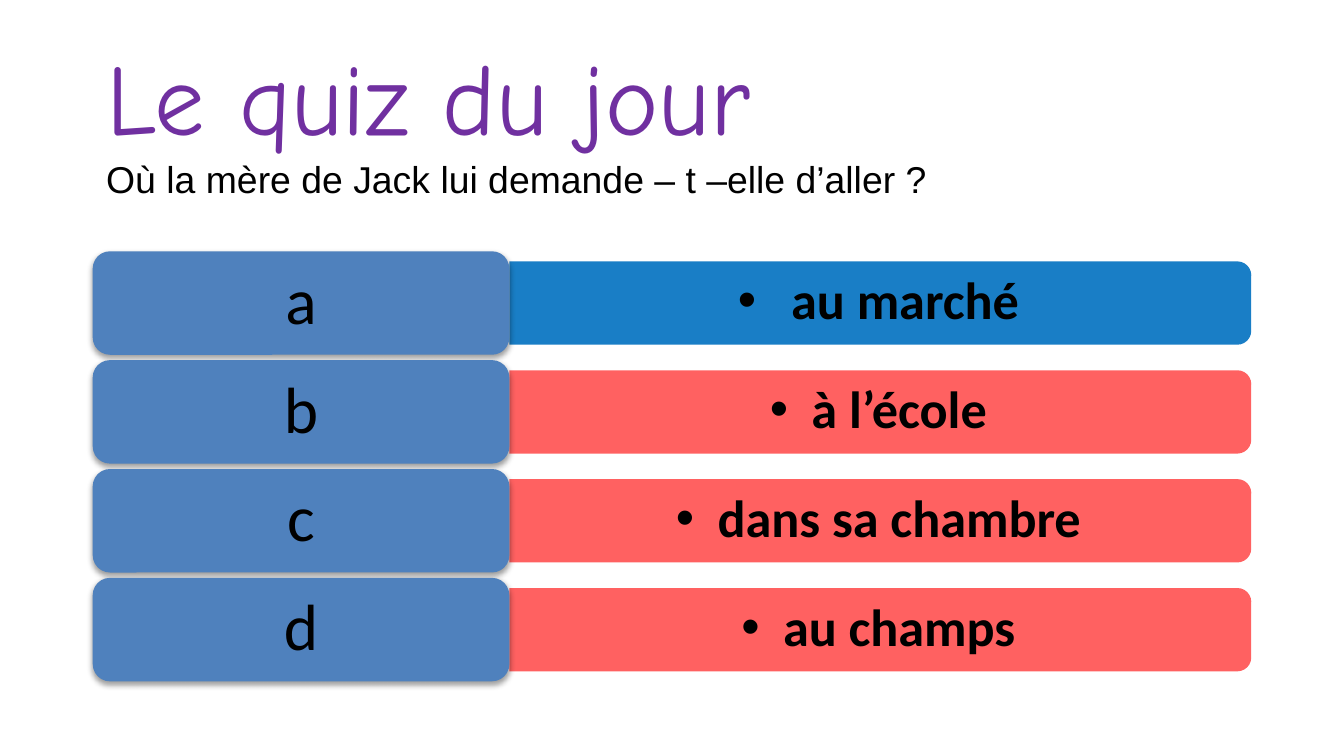
from dataclasses import dataclass

from lxml.etree import SubElement
from pptx import Presentation
from pptx.dml.color import RGBColor
from pptx.enum.shapes import MSO_SHAPE as Shape
from pptx.enum.text import MSO_ANCHOR as Anchor, MSO_AUTO_SIZE as AutoSize, PP_ALIGN as Align
from pptx.oxml.ns import qn
from pptx.util import Inches, Pt


@dataclass(frozen=True)
class Theme:
    """Colours, fonts and type sizes of the quiz."""
    title: str = "7030A0"
    ink: str = "000000"
    label: str = "4F81BD"
    correct: str = "0070C0"
    wrong: str = "FF5050"
    title_font: str = "Comic Neue"
    question_font: str = "Arial"
    answer_font: str = "Calibri"
    title_size: int = 54
    question_size: int = 20
    label_size: int = 35
    answer_size: int = 28


@dataclass(frozen=True)
class Grid:
    """Columns and rows of the answer list, in inches."""
    left: float = 0.69
    top: float = 1.87
    label_width: float = 3.1
    answer_width: float = 5.52
    row_height: float = 0.77
    bar_height: float = 0.62
    pitch: float = 0.81

    @property
    def answer_left(self):
        """Return the left edge of the answer column."""
        return self.left + self.label_width

    def row_top(self, row):
        """Return the top edge of a row."""
        return self.top + row * self.pitch

    def row_middle(self, row):
        """Return the vertical middle of a row."""
        return self.row_top(row) + self.row_height / 2


THEME = Theme()
GRID = Grid()
SLIDE_WIDTH = Inches(10)
SLIDE_HEIGHT = SLIDE_WIDTH * 9 // 16
QUESTION = "Où la mère de Jack lui demande – t –elle d’aller ?"
ANSWERS = [
    ("a", " au marché", THEME.correct),
    ("b", "à l’école", THEME.wrong),
    ("c", "dans sa chambre", THEME.wrong),
    ("d", "au champs", THEME.wrong),
]


def apply_format(target, values):
    """Set every attribute named in a dict of format values."""
    for name, value in values.items():
        setattr(target, name, value)


def box(left, top, width, height):
    """Return a position and size in slide units."""
    return [Inches(value) for value in (left, top, width, height)]


def add_run(paragraph, text, size, font, color, bold=False):
    """Add a formatted run to a paragraph."""
    run = paragraph.add_run()
    run.text = text
    apply_format(run.font, {"size": Pt(size), "name": font, "bold": bold})
    run.font.color.rgb = RGBColor.from_string(color)


def set_frame(frame, side, edge):
    """Centre a text frame vertically, set its margins and return its paragraph."""
    apply_format(frame, {
        "word_wrap": True, "auto_size": AutoSize.NONE, "vertical_anchor": Anchor.MIDDLE,
        "margin_left": Inches(side), "margin_right": Inches(side),
        "margin_top": Inches(edge), "margin_bottom": Inches(edge),
    })
    return frame.paragraphs[0]


def add_block(slide, kind, area, color):
    """Add a filled shape without outline or shadow."""
    shape = slide.shapes.add_shape(kind, *area)
    shape.shadow.inherit = False
    shape.fill.solid()
    shape.fill.fore_color.rgb = RGBColor.from_string(color)
    shape.line.fill.background()
    return shape


def set_alpha(parent, percent):
    """Give the colour element an opacity."""
    SubElement(parent, qn("a:alpha"), val=str(percent * 1000))


def add_shadow(shape):
    """Give a shape a soft shadow below it."""
    effects = shape._element.spPr.find(qn("a:effectLst"))
    shadow = SubElement(effects, qn("a:outerShdw"), blurRad=str(Pt(3.1)), dist=str(Pt(1.6)),
                        dir="5400000", rotWithShape="0")
    set_alpha(SubElement(shadow, qn("a:srgbClr"), val=THEME.ink), 38)


def add_bullet(paragraph):
    """Give a paragraph a hanging round bullet."""
    properties = paragraph._p.get_or_add_pPr()
    properties.set("marL", str(Inches(0.31)))
    properties.set("indent", str(Inches(-0.31)))
    SubElement(properties, qn("a:buFont"), typeface="Arial")
    SubElement(properties, qn("a:buChar"), char="•")


def add_title(slide):
    """Fill the title placeholder with the heading and the question."""
    title = slide.shapes.title
    title.left, title.top, title.width, title.height = box(GRID.left, 0.2, 8.62, 1.35)
    paragraph = set_frame(title.text_frame, 0.1, 0.05)
    paragraph.alignment = Align.LEFT
    add_run(paragraph, "Le quiz du jour", THEME.title_size, THEME.title_font, THEME.title)
    paragraph.add_line_break()
    add_run(paragraph, QUESTION, THEME.question_size, THEME.question_font, THEME.ink)


def add_answer(slide, row, text, color):
    """Add the answer bar, rounded on its right side, and its bulleted text."""
    middle = GRID.row_middle(row)
    center = GRID.answer_left + GRID.answer_width / 2
    area = box(center - GRID.bar_height / 2, middle - GRID.answer_width / 2,
               GRID.bar_height, GRID.answer_width)
    bar = add_block(slide, Shape.ROUND_2_SAME_RECTANGLE, area, color)
    bar.rotation = 90
    set_alpha(bar._element.spPr.find(qn("a:solidFill"))[0], 90)
    text_box = slide.shapes.add_textbox(*box(GRID.answer_left, middle - 0.28, 5.49, 0.56))
    paragraph = set_frame(text_box.text_frame, 0.12, 0.06)
    apply_format(paragraph, {"alignment": Align.CENTER, "line_spacing": 0.9, "level": 1})
    add_bullet(paragraph)
    add_run(paragraph, text, THEME.answer_size, THEME.answer_font, THEME.ink, True)


def add_label(slide, row, letter):
    """Add the rounded box with the letter of an answer."""
    area = box(GRID.left, GRID.row_top(row), GRID.label_width, GRID.row_height)
    label = add_block(slide, Shape.ROUNDED_RECTANGLE, area, THEME.label)
    add_shadow(label)
    paragraph = set_frame(label.text_frame, 0.15, 0.07)
    apply_format(paragraph, {"alignment": Align.CENTER, "line_spacing": 0.9})
    add_run(paragraph, letter, THEME.label_size, THEME.answer_font, THEME.ink)


def main():
    """Build the quiz slide and save it."""
    presentation = Presentation()
    apply_format(presentation, {"slide_width": SLIDE_WIDTH, "slide_height": SLIDE_HEIGHT})
    slide = presentation.slides.add_slide(presentation.slide_layouts.get_by_name("Title Only"))
    add_title(slide)
    for row, (letter, text, color) in enumerate(ANSWERS):
        add_answer(slide, row, text, color)
        add_label(slide, row, letter)
    presentation.save("out.pptx")


if __name__ == "__main__":
    main()
